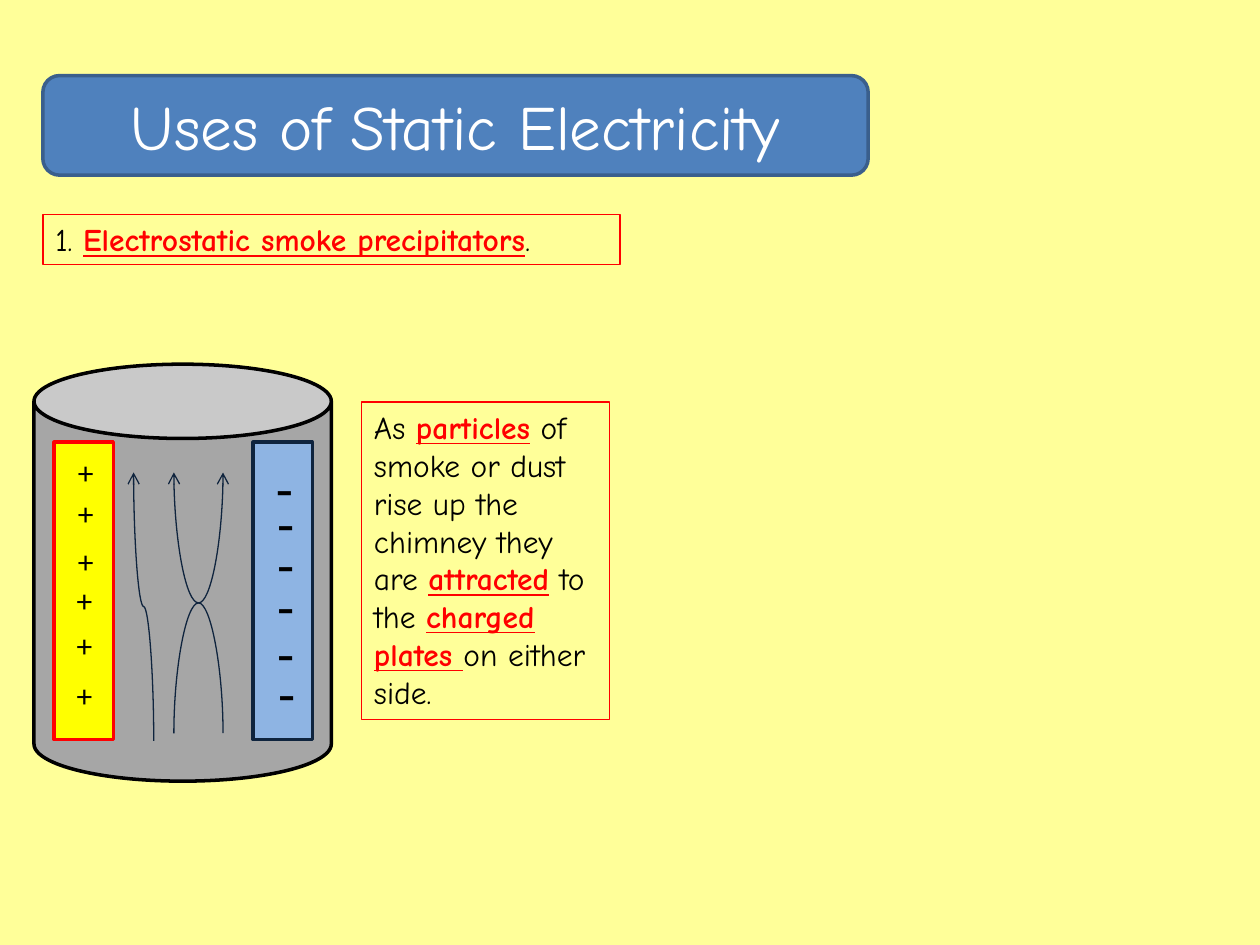
from lxml import etree
from pptx import Presentation
from pptx import util as u
from pptx.dml.color import RGBColor
from pptx.enum import shapes, text
from pptx.oxml import ns

# Grid of 100 columns by 75 rows
SLIDE_W, SLIDE_H = u.Inches(10), u.Inches(7.5)
COL, ROW = SLIDE_W / 100, SLIDE_H / 75

CREAM = RGBColor(0xFF, 0xFF, 0x99)
BLUE = RGBColor(0x4F, 0x81, 0xBD)
BLUE_EDGE = RGBColor(0x3A, 0x5F, 0x8C)
PALE_BLUE = RGBColor(0x8E, 0xB4, 0xE3)
NAVY = RGBColor(0x0F, 0x24, 0x3E)
GREY = RGBColor(0xA6, 0xA6, 0xA6)
RED = RGBColor(0xFF, 0x00, 0x00)
YELLOW = RGBColor(0xFF, 0xFF, 0x00)
BLACK = RGBColor(0, 0, 0)
WHITE = RGBColor(0xFF, 0xFF, 0xFF)

BODY_FONT, CHARGE_FONT = "Comic Neue", "Calibri"
PLATE_TOP, PLATE_W, PLATE_H = 35.1, 4.7, 23.6
CHARGE_W = 3.1


def grid(col, row, cols, rows):
    return int(col * COL), int(row * ROW), int(cols * COL), int(rows * ROW)


def style(paragraph, font_name, size, color):
    font = paragraph.font
    font.name, font.size = font_name, u.Pt(size)
    font.color.rgb = color


def add_solid(slide, kind, box, fill, edge):
    solid = slide.shapes.add_shape(kind, *grid(*box))
    solid.shadow.inherit = False
    solid.fill.solid()
    solid.fill.fore_color.rgb = fill
    solid.line.color.rgb = edge
    solid.line.width = u.Pt(2)
    return solid


def add_text(slide, box, font_name, size, wording):
    """Text box in which words between asterisks are key words."""
    note = slide.shapes.add_textbox(*grid(*box))
    frame = note.text_frame
    frame.word_wrap = True
    frame.auto_size = text.MSO_AUTO_SIZE.SHAPE_TO_FIT_TEXT
    paragraph = frame.paragraphs[0]
    style(paragraph, font_name, size, BLACK)
    for i, part in enumerate(wording.split("*")):
        run = paragraph.add_run()
        run.text = part
        if i % 2:
            run.font.bold = run.font.underline = True
            run.font.color.rgb = RED
    return note


def add_framed_text(slide, box, wording):
    note = add_text(slide, box, BODY_FONT, 18, wording)
    note.line.color.rgb = RED
    note.line.width = u.Pt(0.75)


def add_plate(slide, col, fill, edge, sign, size, sign_rows, places):
    add_solid(slide, shapes.MSO_SHAPE.RECTANGLE,
              (col, PLATE_TOP, PLATE_W, PLATE_H), fill, edge)
    for sign_col, row in places:
        add_text(slide, (sign_col, row, CHARGE_W, sign_rows),
                 CHARGE_FONT, size, sign)


def add_smoke_path(slide, start_col, end_col, bottom, top):
    """Curve laid on its side, then turned to rise from bottom to top."""
    mid_x = (start_col + end_col) / 2 * COL
    mid_y = (bottom + top) / 2 * ROW
    half_rise = (bottom - top) / 2 * ROW
    half_drift = (start_col - end_col) / 2 * COL
    path = slide.shapes.add_connector(
        shapes.MSO_CONNECTOR.CURVE,
        int(mid_x - half_rise), int(mid_y + half_drift),
        int(mid_x + half_rise), int(mid_y - half_drift))
    path.line.color.rgb = NAVY
    path.line.width = u.Pt(0.75)
    properties = path._element.spPr
    properties.find(ns.qn("a:xfrm")).set("rot", str(270 * 60000))
    arrow = etree.SubElement(properties.find(ns.qn("a:ln")), ns.qn("a:tailEnd"))
    arrow.set("type", "arrow")
    etree.SubElement(properties, ns.qn("a:effectLst"))


def main():
    prs = Presentation()
    prs.slide_width, prs.slide_height = SLIDE_W, SLIDE_H
    slide = prs.slides.add_slide(prs.slide_layouts[6])
    slide.background.fill.solid()
    slide.background.fill.fore_color.rgb = CREAM

    # Title and heading
    title = add_solid(slide, shapes.MSO_SHAPE.ROUNDED_RECTANGLE,
                      (3.4, 6, 65.5, 7.9), BLUE, BLUE_EDGE)
    title.text_frame.text = "Uses of Static Electricity"
    title.text_frame.vertical_anchor = text.MSO_ANCHOR.MIDDLE
    title_line = title.text_frame.paragraphs[0]
    title_line.alignment = text.PP_ALIGN.CENTER
    style(title_line, BODY_FONT, 36, WHITE)
    add_framed_text(slide, (3.4, 17, 45.8, 4),
                    "1. *Electrostatic smoke precipitators*.")

    # Chimney with its charged plates
    add_solid(slide, shapes.MSO_SHAPE.CAN, (2.7, 28.9, 23.6, 33.1), GREY, BLACK)
    add_plate(slide, 4.3, YELLOW, RED, "+", 18, 4,
              [(5.2, 35.5), (5.2, 38.7), (5.2, 42.5),
               (5.1, 45.6), (5.1, 49.2), (5.1, 53.2)])
    add_plate(slide, 20.1, PALE_BLUE, NAVY, "-", 32, 6.4,
              [(20.9, 35.5), (21, 38.3), (21, 41.5),
               (21, 44.9), (21, 48.6), (21.1, 51.8)])

    # Rising smoke
    for start_col, end_col, bottom in [(12.2, 10.6, 58.8), (13.8, 17.7, 58.2),
                                       (17.7, 13.8, 58.2)]:
        add_smoke_path(slide, start_col, end_col, bottom, 37.5)

    # Explanation
    add_framed_text(slide, (28.7, 31.9, 19.7, 25.2),
                    "As *particles* of smoke or dust rise up the chimney they "
                    "are *attracted* to the *charged plates *on either side.")

    prs.save("out.pptx")


if __name__ == "__main__":
    main()
